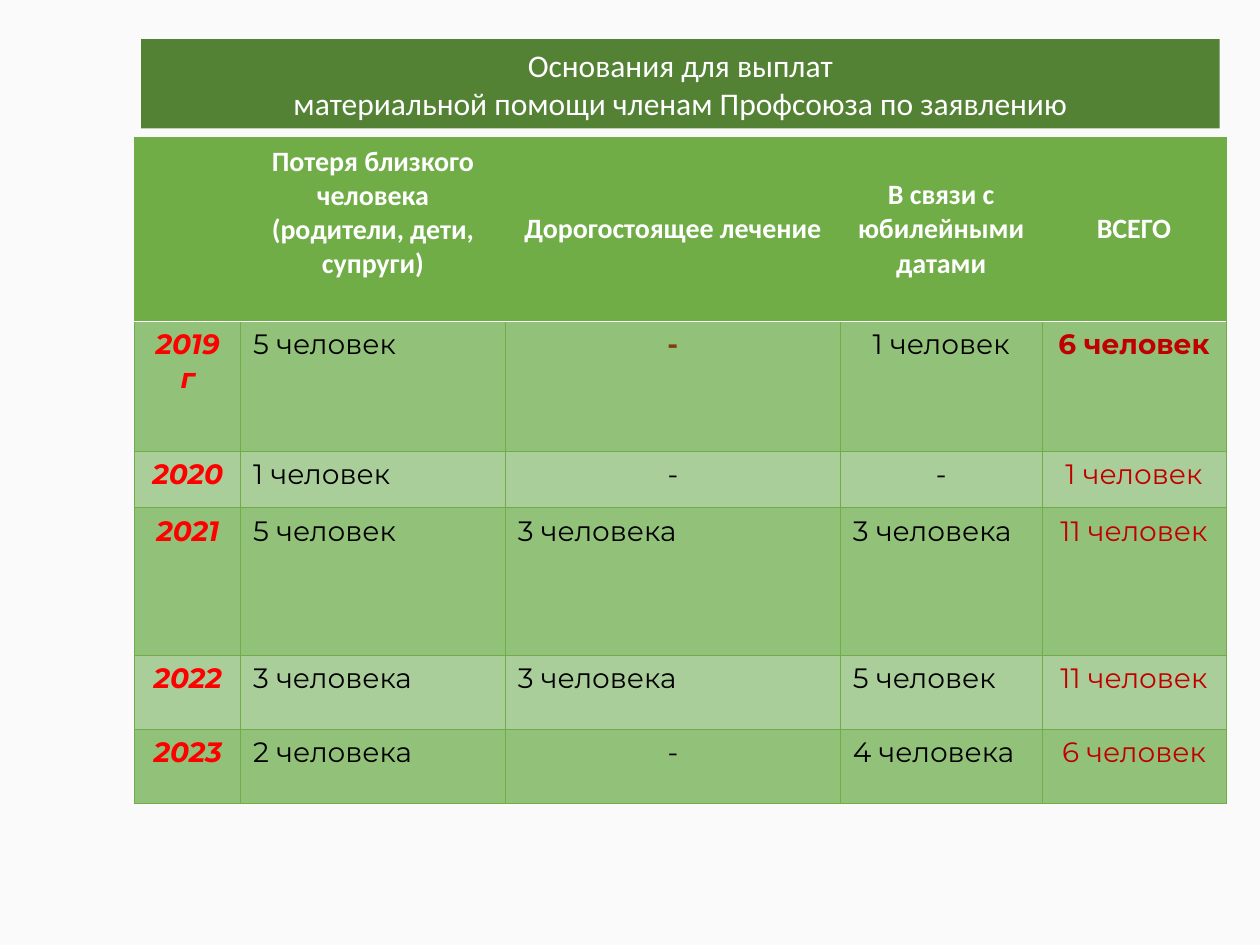
from lxml import etree
from pptx import Presentation
from pptx.dml.color import RGBColor
from pptx.enum.shapes import MSO_SHAPE
from pptx.enum.text import MSO_ANCHOR, PP_ALIGN
from pptx.oxml.ns import qn
from pptx.util import Inches, Pt

RECTANGLE = MSO_SHAPE.RECTANGLE
MIDDLE, TOP = MSO_ANCHOR.MIDDLE, MSO_ANCHOR.TOP
CENTER, LEFT = PP_ALIGN.CENTER, PP_ALIGN.LEFT

BACKGROUND = RGBColor(0xFA, 0xFA, 0xFA)
DARK_GREEN = RGBColor(0x54, 0x82, 0x35)
GREEN = RGBColor(0x70, 0xAD, 0x47)
ODD_BAND = RGBColor(0x92, 0xC1, 0x7A)
EVEN_BAND = RGBColor(0xA9, 0xCE, 0x9A)
WHITE = RGBColor(0xFF, 0xFF, 0xFF)
BLACK = RGBColor(0x00, 0x00, 0x00)
RED = RGBColor(0xFF, 0x00, 0x00)
DARK_RED = RGBColor(0xC0, 0x00, 0x00)
BROWN = RGBColor(0x84, 0x3C, 0x0B)

TITLE = "Основания для выплат\nматериальной помощи членам Профсоюза по заявлению"
HEADERS = ["", "Потеря близкого человека (родители, дети, супруги)",
           "Дорогостоящее лечение", "В связи с юбилейными датами", "ВСЕГО"]
PAYMENTS = [
    ["2019 г", "5 человек", "-", "1 человек", "6 человек"],
    ["2020", "1 человек", "-", "-", "1 человек"],
    ["2021", "5 человек", "3 человека", "3 человека", "11 человек"],
    ["2022", "3 человека", "3 человека", "5 человек", "11 человек"],
    ["2023", "2 человека", "-", "4 человека", "6 человек"],
]
COLUMN_WIDTHS = [0.84, 2.1, 2.66, 1.6, 1.46]
ROW_HEIGHTS = [1.46, 1.03, 0.45, 1.17, 0.59, 0.59]
YEAR_COLUMN, TOTAL_COLUMN = 0, 4


def format_text(text_frame, size, font_name, color, alignment, bold=False, italic=False):
    for paragraph in text_frame.paragraphs:
        paragraph.alignment = alignment
        for run in paragraph.runs:
            run.font.size = Pt(size)
            run.font.name = font_name
            run.font.color.rgb = color
            run.font.bold = bold
            run.font.italic = italic


def add_title(slide):
    shape = slide.shapes.add_shape(
        RECTANGLE, Inches(1.12), Inches(0.31), Inches(8.56), Inches(0.71))
    shape.shadow.inherit = False
    shape.fill.solid()
    shape.fill.fore_color.rgb = DARK_GREEN
    shape.line.fill.background()
    shape.text_frame.word_wrap = True
    shape.text_frame.text = TITLE
    format_text(shape.text_frame, 18, "Calibri", WHITE, CENTER)


def set_borders(cell, top=(GREEN, 0.5), bottom=(GREEN, 0.5)):
    side = (GREEN, 0.5)
    properties = cell._tc.get_or_add_tcPr()
    for tag, (color, width) in zip(
            ("a:lnL", "a:lnR", "a:lnT", "a:lnB"), (side, side, top, bottom)):
        line = etree.SubElement(properties, qn(tag), w=str(Pt(width)))
        fill = etree.SubElement(line, qn("a:solidFill"))
        etree.SubElement(fill, qn("a:srgbClr"), val=str(color))


def fill_cell(cell, text, color, anchor):
    cell.fill.solid()
    cell.fill.fore_color.rgb = color
    cell.vertical_anchor = anchor
    cell.text_frame.text = text


def add_header(table):
    for column, text in enumerate(HEADERS):
        cell = table.cell(0, column)
        set_borders(cell, bottom=(WHITE, 1))
        fill_cell(cell, text, GREEN, MIDDLE)
        format_text(cell.text_frame, 16, "Calibri", WHITE, CENTER, bold=True)
    table.cell(0, 1).margin_bottom = Inches(0.31)


def add_payments(table):
    for row, values in enumerate(PAYMENTS, start=1):
        first = row == 1
        for column, text in enumerate(values):
            cell = table.cell(row, column)
            set_borders(cell, top=(WHITE, 1) if first else (GREEN, 0.5))
            fill_cell(cell, text, ODD_BAND if row % 2 else EVEN_BAND, TOP)
            is_year = column == YEAR_COLUMN
            is_total = column == TOTAL_COLUMN
            is_dash = text == "-"
            color = BLACK
            if is_year:
                color = RED
            elif is_total:
                color = DARK_RED
            elif first and is_dash:
                color = BROWN
            centered = is_year or is_total or is_dash or (first and column == 3)
            format_text(cell.text_frame, 16, "Montserrat", color,
                        CENTER if centered else LEFT,
                        bold=is_year or (first and (is_total or is_dash)),
                        italic=is_year)


def add_payment_table(slide):
    table = slide.shapes.add_table(
        len(ROW_HEIGHTS), len(COLUMN_WIDTHS), Inches(1.07), Inches(1.09),
        Inches(sum(COLUMN_WIDTHS)), Inches(sum(ROW_HEIGHTS))).table
    table.horz_banding = False
    table.first_row = False
    for column, width in zip(table.columns, COLUMN_WIDTHS):
        column.width = Inches(width)
    for row, height in zip(table.rows, ROW_HEIGHTS):
        row.height = Inches(height)
    add_header(table)
    add_payments(table)


def main():
    presentation = Presentation()
    presentation.slide_width = Inches(10)
    presentation.slide_height = Inches(7.5)
    slide = presentation.slides.add_slide(presentation.slide_layouts[6])
    slide.background.fill.solid()
    slide.background.fill.fore_color.rgb = BACKGROUND
    add_payment_table(slide)
    add_title(slide)
    presentation.save("out.pptx")


if __name__ == "__main__":
    main()
